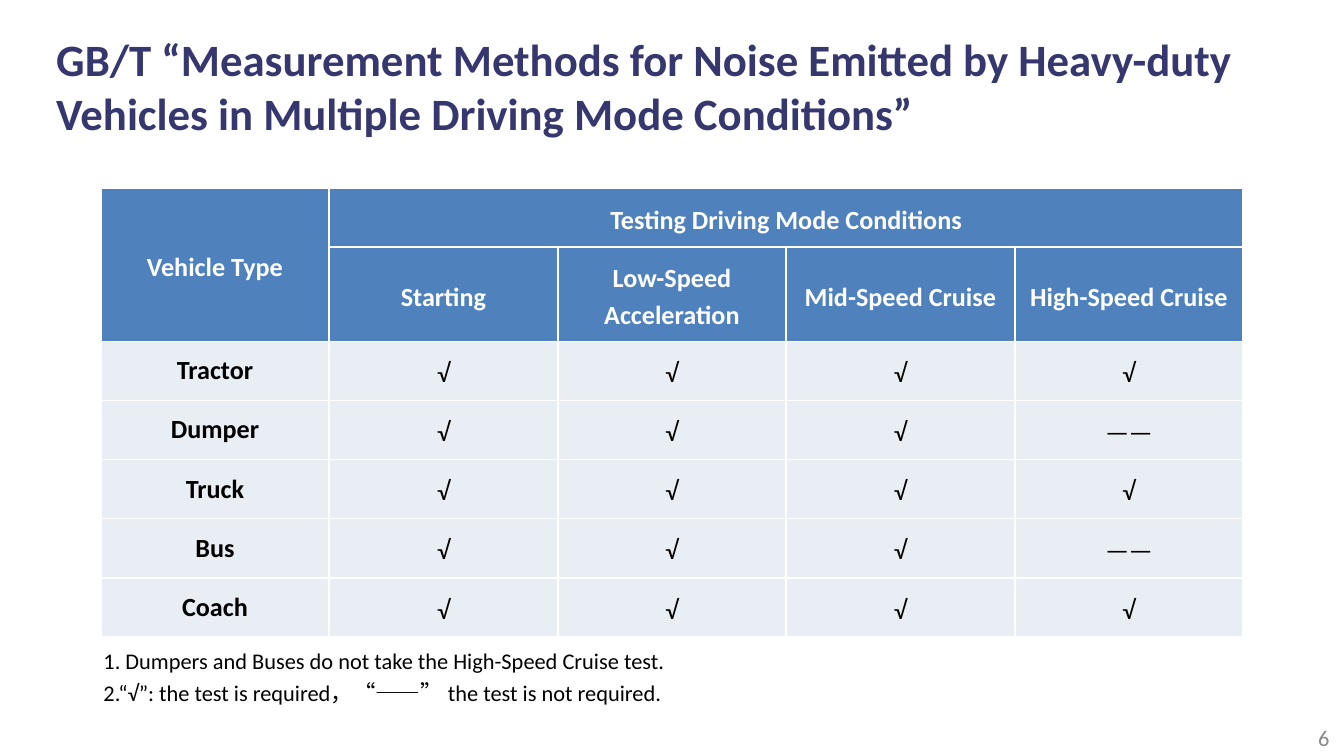
from lxml import etree
from pptx import Presentation
from pptx.dml.color import RGBColor
from pptx.enum.text import MSO_ANCHOR as Anchor, MSO_AUTO_SIZE as AutoSize, PP_ALIGN as Align
from pptx.oxml.ns import qn
from pptx.util import Inches, Pt

FONT = "Calibri"
COLORS = {
    "title": "36376F",
    "header": "4F81BD",
    "body": "E9EDF4",
    "white": "FFFFFF",
    "black": "000000",
    "number": "898989",
}

# Widescreen slide and table grid, in inches
WIDTH = 10
HEIGHT = WIDTH * 9 / 16
LEFT, TOP = 0.075 * WIDTH, 1.4
COL_WIDTH, COLS = 0.17 * WIDTH, 5
ROW_HEIGHT, HEADER_HEIGHT, NOTES_HEIGHT = 0.44, 0.7, 0.61

YES, NO = "√", "——"
MODES = ["Starting", "Low-Speed Acceleration", "Mid-Speed Cruise", "High-Speed Cruise"]
VEHICLES = {"Tractor": YES, "Dumper": NO, "Truck": YES, "Bus": NO, "Coach": YES}
NOTES = [
    "1. Dumpers and Buses do not take the High-Speed Cruise test.",
    "2.“√”: the test is required，“——” the test is not required.",
]


def color(name):
    return RGBColor.from_string(COLORS[name])


def write(tf, lines, size, ink, bold=False, align=Align.LEFT, spacing=None):
    """Fill a text frame with one paragraph per line."""
    tf.text = "\n".join(lines)
    for p in tf.paragraphs:
        p.alignment = align
        if spacing:
            p.line_spacing = Pt(spacing)
        for r in p.runs:
            r.font.name, r.font.size, r.font.bold = FONT, Pt(size), bold
            r.font.color.rgb = color(ink)


def add_text(slide, box, text, anchor=Anchor.TOP, auto_size=AutoSize.NONE, **style):
    tf = slide.shapes.add_textbox(*map(Inches, box)).text_frame
    tf.word_wrap = True
    tf.vertical_anchor = anchor
    tf.auto_size = auto_size
    write(tf, [text], **style)


def add_borders(cell):
    """Draw a thin white line on every side of a cell."""
    props = cell._tc.get_or_add_tcPr()
    for side in ("lnL", "lnR", "lnT", "lnB"):
        line = etree.SubElement(props, qn(f"a:{side}"), w=str(Pt(1)))
        solid = etree.SubElement(line, qn("a:solidFill"))
        etree.SubElement(solid, qn("a:srgbClr"), val=COLORS["white"])


def style_cell(cell, fill):
    cell.margin_left = cell.margin_right = Inches(0.02)
    cell.margin_top = cell.margin_bottom = 0
    cell.vertical_anchor = Anchor.MIDDLE
    add_borders(cell)
    cell.fill.solid()
    cell.fill.fore_color.rgb = color(fill)


def add_test_table(slide):
    heights = [ROW_HEIGHT, HEADER_HEIGHT] + [ROW_HEIGHT] * len(VEHICLES) + [NOTES_HEIGHT]
    last = len(heights) - 1
    box = (LEFT, TOP, COL_WIDTH * COLS, sum(heights))
    table = slide.shapes.add_table(len(heights), COLS, *map(Inches, box)).table
    for column in table.columns:
        column.width = Inches(COL_WIDTH)
    for row, height in zip(table.rows, heights):
        row.height = Inches(height)

    for i, row in enumerate(table.rows):
        fill = "header" if i < 2 else "white" if i == last else "body"
        for cell in row.cells:
            style_cell(cell, fill)

    # Merged areas: vehicle heading, mode heading, notes
    table.cell(0, 0).merge(table.cell(1, 0))
    table.cell(0, 1).merge(table.cell(0, COLS - 1))
    table.cell(last, 0).merge(table.cell(last, COLS - 1))

    def put(row, col, text, ink="black", bold=False, spacing=20):
        write(table.cell(row, col).text_frame, [text], 14, ink, bold, Align.CENTER, spacing)

    # Header rows
    put(0, 0, "Vehicle Type", "white", True)
    put(0, 1, "Testing Driving Mode Conditions", "white", True)
    for col, mode in enumerate(MODES, 1):
        put(1, col, mode, "white", True)

    # One row per vehicle; only the high-speed test varies
    for row, (vehicle, high_speed) in enumerate(VEHICLES.items(), 2):
        put(row, 0, vehicle, bold=True, spacing=None)
        for col, mark in enumerate([YES] * 3 + [high_speed], 1):
            put(row, col, mark)

    write(table.cell(last, 0).text_frame, NOTES, 12, "black", align=Align.JUSTIFY)


def main():
    prs = Presentation()
    prs.slide_width, prs.slide_height = Inches(WIDTH), Inches(HEIGHT)
    slide = prs.slides.add_slide(prs.slide_layouts[6])

    # Title
    add_text(slide, (0.32, 0.19, 9.01, 0.91),
             "GB/T “Measurement Methods for Noise Emitted by Heavy-duty "
             "Vehicles in Multiple Driving Mode Conditions”",
             auto_size=AutoSize.SHAPE_TO_FIT_TEXT, size=24, ink="title", bold=True)

    add_test_table(slide)

    # Slide number
    add_text(slide, (9.61, 5.35, 0.38, 0.27), "6", anchor=Anchor.MIDDLE,
             size=12, ink="number", align=Align.RIGHT)

    prs.save("out.pptx")


if __name__ == "__main__":
    main()
